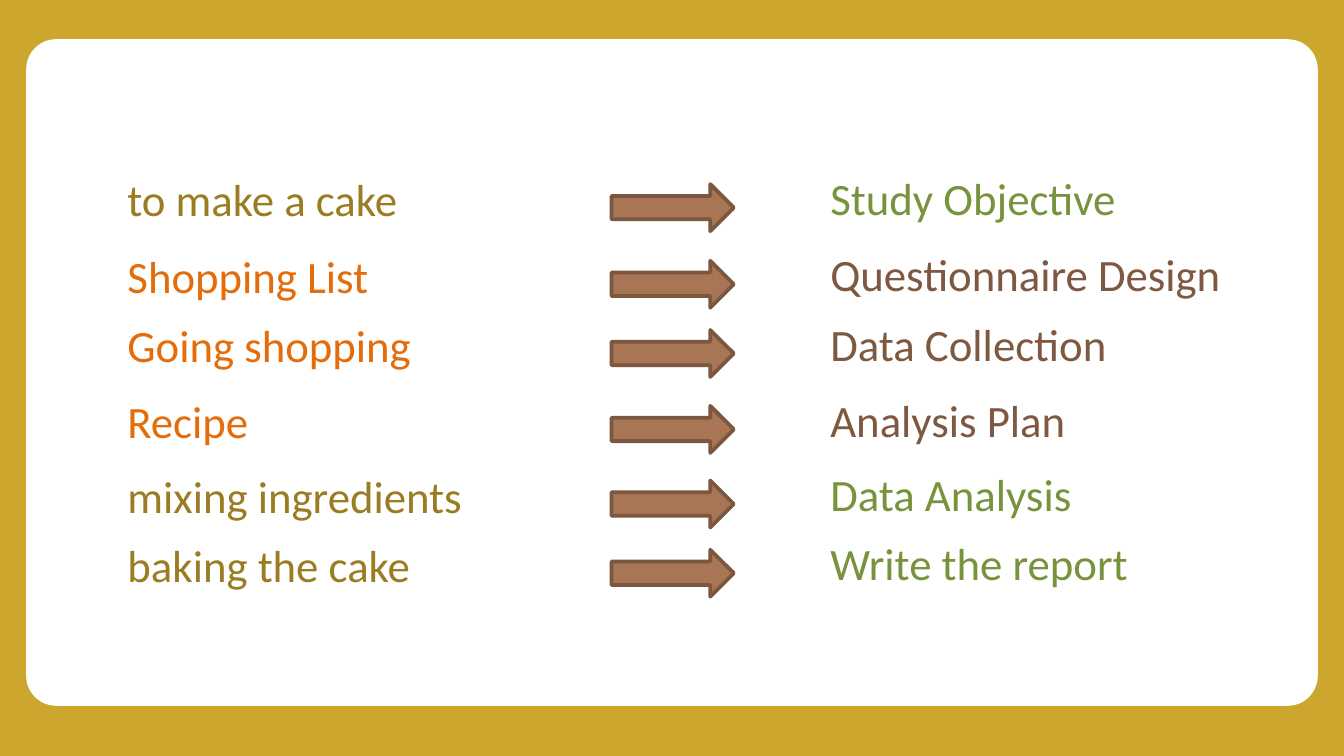
from dataclasses import dataclass

from pptx import Presentation
from pptx.dml.color import RGBColor as RGB
from pptx.enum.shapes import MSO_SHAPE as Shape
from pptx.enum.text import MSO_AUTO_SIZE as Fit
from pptx.util import Inches, Pt


@dataclass(frozen=True)
class Theme:
    gold: str = "CDA62D"
    white: str = "FFFFFF"
    olive: str = "9A7C22"
    orange: str = "E46C0A"
    green: str = "77933C"
    brown: str = "7E5840"
    clay: str = "A87555"
    edge: str = "7C573F"
    font: str = "Calibri"
    size: int = 24
    line: int = 2


class Deck:
    """Places elements on a 16:9 grid of 100 columns by 56.25 rows."""

    COLS, ROWS = 100, 56.25

    def __init__(self, theme):
        self.theme = theme
        self.prs = Presentation()
        self.prs.slide_width = Inches(10)
        self.prs.slide_height = self.prs.slide_width * 9 // 16
        self.slide = self.prs.slides.add_slide(self.prs.slide_layouts[6])
        back = self.slide.background.fill
        back.solid()
        back.fore_color.rgb = RGB.from_string(theme.gold)

    def box(self, x, y, w, h):
        col = self.prs.slide_width / self.COLS
        row = self.prs.slide_height / self.ROWS
        return round(x * col), round(y * row), round(w * col), round(h * row)

    def group(self):
        return self.slide.shapes.add_group_shape()

    def shape(self, home, kind, area, fill, edge=None):
        item = home.shapes.add_shape(kind, *self.box(*area))
        item.shadow.inherit = False
        item.fill.solid()
        item.fill.fore_color.rgb = RGB.from_string(fill)
        if edge:
            item.line.color.rgb = RGB.from_string(edge)
            item.line.width = Pt(self.theme.line)
        else:
            item.line.fill.background()
        return item

    def panel(self, area, curve):
        item = self.shape(self.slide, Shape.ROUNDED_RECTANGLE, area, self.theme.white)
        item.adjustments[0] = curve

    def arrow(self, home, area):
        self.shape(home, Shape.RIGHT_ARROW, area, self.theme.clay, self.theme.edge)

    def label(self, home, text, area, color):
        frame = home.shapes.add_textbox(*self.box(*area)).text_frame
        frame.word_wrap = False
        frame.auto_size = Fit.SHAPE_TO_FIT_TEXT
        para = frame.paragraphs[0]
        para.text = text
        para.font.name = self.theme.font
        para.font.size = Pt(self.theme.size)
        para.font.color.rgb = RGB.from_string(color)

    def pair(self, home, y, task, step, hues):
        """Draw one row: a baking task, an arrow and the matching study step."""
        (left, wide), (right, span) = task, step
        self.label(home, left, (8.5, y, wide, 5), hues[0])
        self.label(home, right, (60.8, y - 0.1, span, 5), hues[1])
        self.arrow(home, (45.5, y + 1.4, 9.1, 3.5))


def main():
    theme = Theme()
    deck = Deck(theme)
    deck.panel((1.95, 2.92, 96.1, 49.6), 0.045)

    outer = theme.olive, theme.green
    inner = theme.orange, theme.brown
    # Each stage: colours, then rows of top, (task, width), (step, width)
    stages = [
        (outer, [(12.3, ("to make a cake", 22.3), ("Study Objective", 23.5))]),
        (inner, [(18, ("Shopping List", 20.1), ("Questionnaire Design", 31.4)),
                 (23.15, ("Going shopping", 23.3), ("Data Collection", 22.8))]),
        (inner, [(28.8, ("Recipe", 11.1), ("Analysis Plan", 19.7))]),
        (outer, [(34.35, ("mixing ingredients", 27.1), ("Data Analysis", 20.1)),
                 (39.5, ("baking the cake", 23.2), ("Write the report", 24.4))]),
    ]
    for hues, rows in stages:
        home = deck.group()
        for y, task, step in rows:
            deck.pair(home, y, task, step, hues)

    deck.prs.save("out.pptx")


if __name__ == "__main__":
    main()
